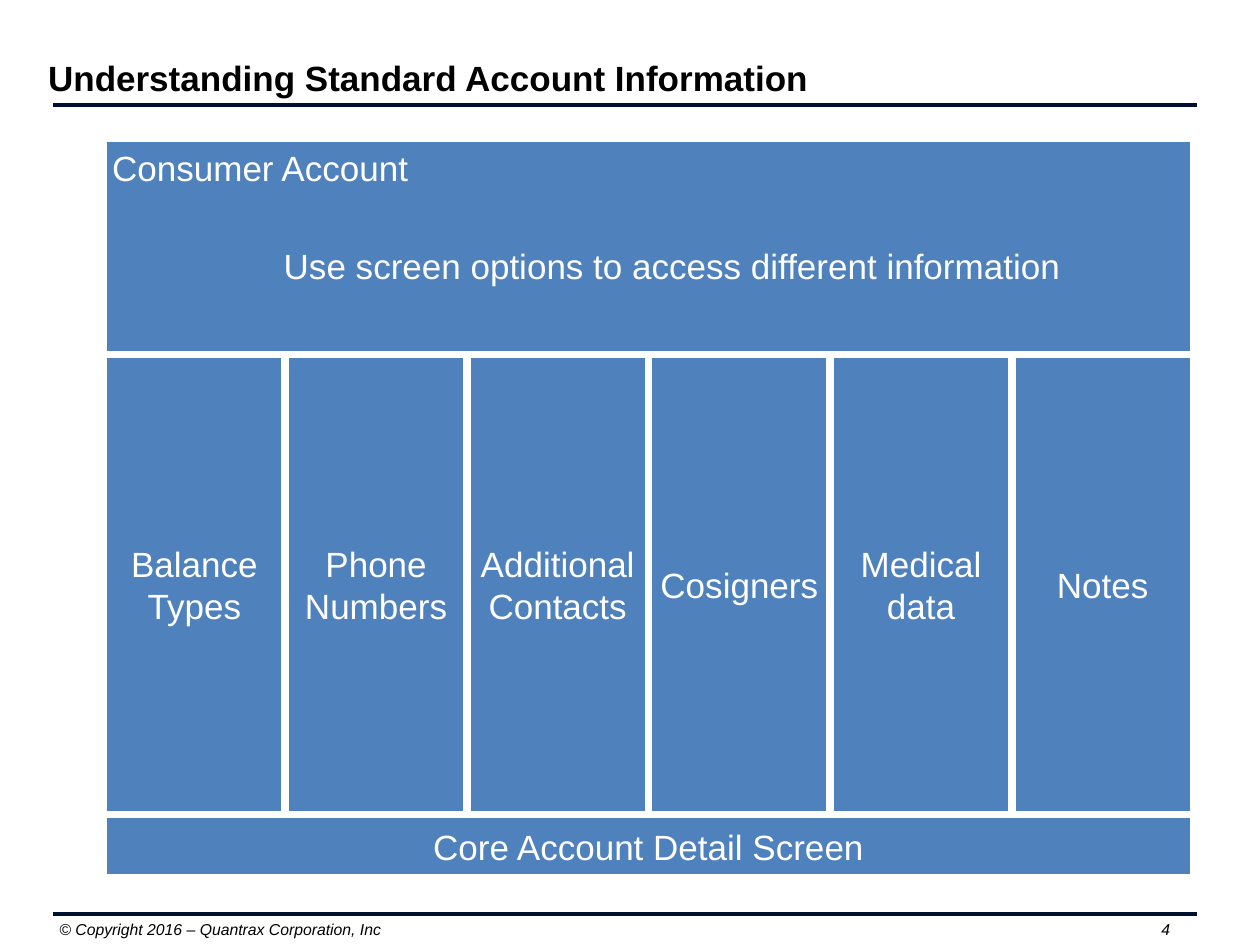
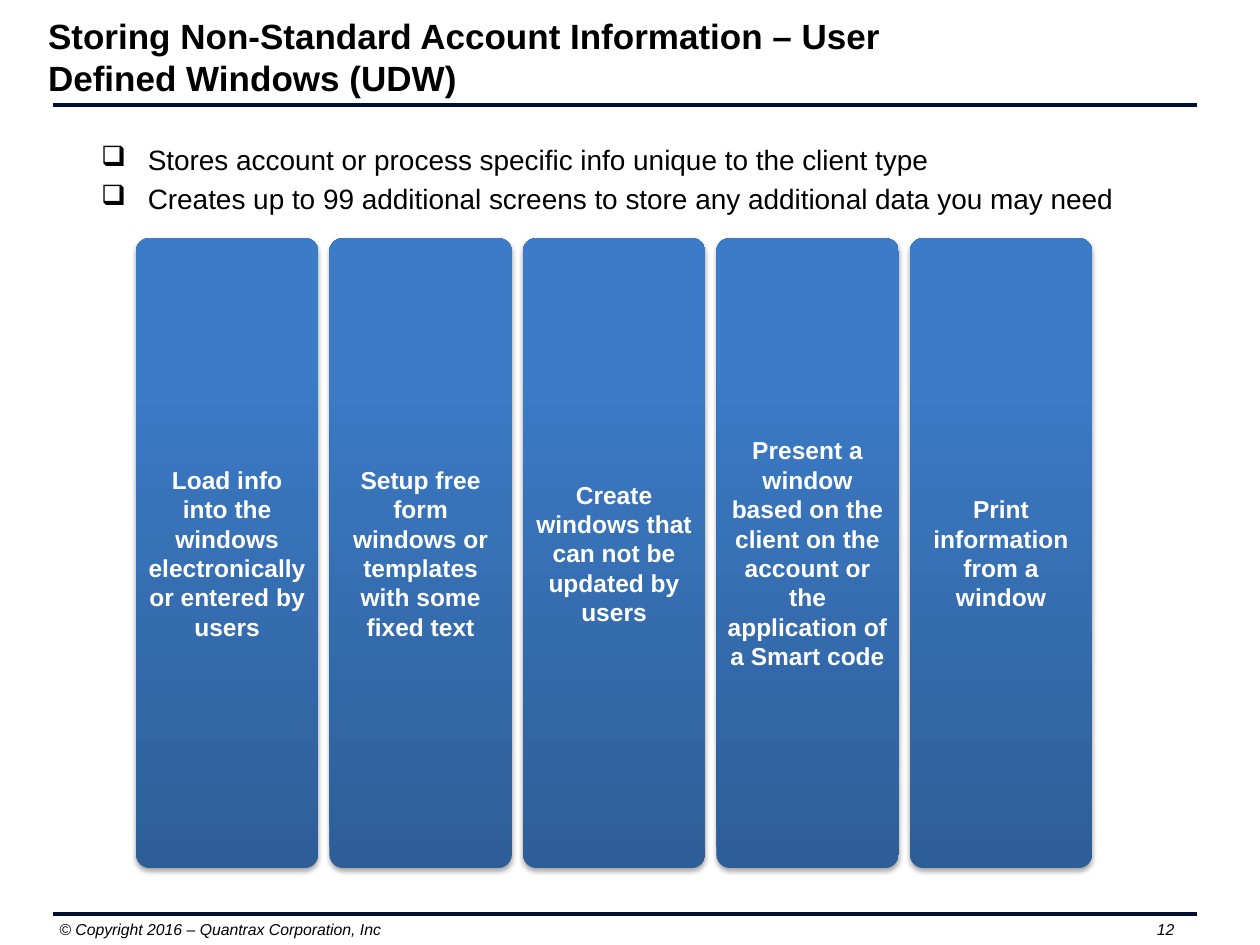
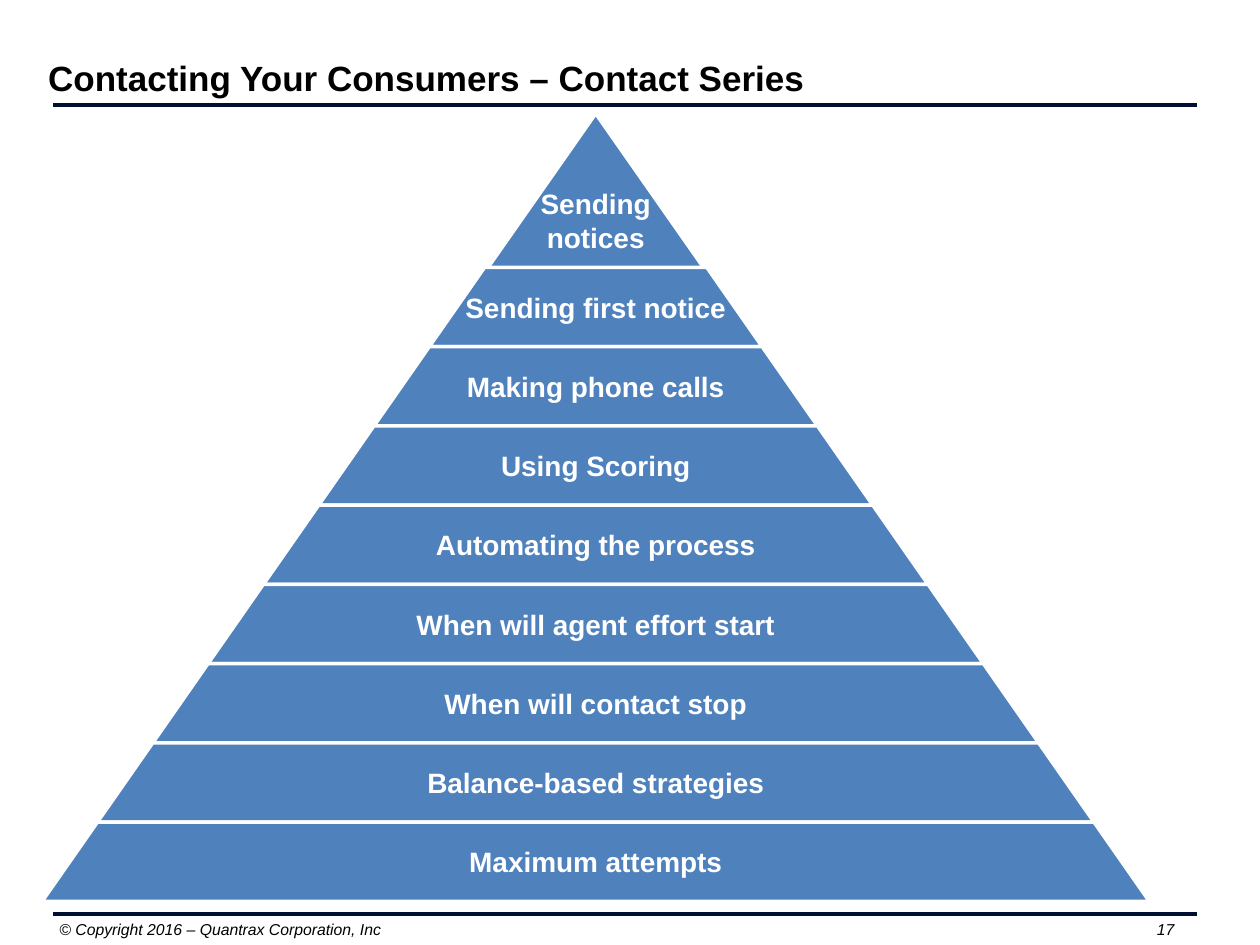
from copy import deepcopy

from pptx import Presentation
from pptx.dml.color import RGBColor
from pptx.enum.shapes import MSO_CONNECTOR, MSO_SHAPE
from pptx.enum.text import MSO_ANCHOR, PP_ALIGN
from pptx.oxml.ns import qn
from pptx.util import Cm, Pt

LEFT, CENTER = PP_ALIGN.LEFT, PP_ALIGN.CENTER
TOP, MIDDLE, BOTTOM = MSO_ANCHOR.TOP, MSO_ANCHOR.MIDDLE, MSO_ANCHOR.BOTTOM
RECTANGLE, ROUNDED = MSO_SHAPE.RECTANGLE, MSO_SHAPE.ROUNDED_RECTANGLE
STRAIGHT = MSO_CONNECTOR.STRAIGHT

COLORS = {
    "text": "000000",
    "white": "FFFFFF",
    "soft_white": "FDFDFD",
    "rule": "001030",
    "block": "4F81BD",
    "card_bottom": "2E5E97",
    "card_middle": "3C7BC7",
    "card_top": "3A7CCA",
    "shadow": "000000",
}
CARD_STOPS = [(0, "card_bottom"), (0.8, "card_middle"), (1, "card_top")]

TITLE = {"size": Pt(20), "bold": True}
FOOTER = {"size": Pt(9), "italic": True}
BLOCK_TEXT = {"size": Pt(20)}
BULLET_TEXT = {"size": Pt(16)}
CARD_TEXT = {"size": Pt(14), "bold": True}
LEVEL_TEXT = {"size": Pt(16), "bold": True}

COPYRIGHT = "© Copyright 2016 – Quantrax Corporation, Inc"
ACCOUNT_PARTS = ["Balance Types", "Phone Numbers", "Additional Contacts",
                 "Cosigners", "Medical data", "Notes"]
WINDOW_USES = [
    "Load info into the windows electronically or entered by users",
    "Setup free form windows or templates with some fixed text",
    "Create windows that can not be updated by users",
    "Present a window based on the client on the account or the "
    "application of a Smart code",
    "Print information from a window",
]
WINDOW_BULLETS = [
    "Stores account or process specific info unique to the client type",
    "Creates up to 99 additional screens to store any additional data you may need",
]
CONTACT_LEVELS = [
    "Sending first notice", "Making phone calls", "Using Scoring",
    "Automating the process", "When will agent effort start",
    "When will contact stop", "Balance-based strategies", "Maximum attempts",
]


def rgb(name):
    return RGBColor.from_string(COLORS[name])


def write_text(shape, lines, style, color="text", align=LEFT, anchor=TOP):
    frame = shape.text_frame
    frame_format = {"word_wrap": True, "vertical_anchor": anchor}
    sides = ("left", "top", "right", "bottom")
    frame_format.update({f"margin_{side}": Cm(0.13) for side in sides})
    for name, value in frame_format.items():
        setattr(frame, name, value)
    for index, line in enumerate(lines):
        para = frame.add_paragraph() if index else frame.paragraphs[0]
        para.alignment = align
        span = para.add_run()
        span.text = line
        for name, value in {"name": "Arial", **style}.items():
            setattr(span.font, name, value)
        span.font.color.rgb = rgb(color)
    return frame


def add_text(page, place, lines, style, **layout):
    box = page.shapes.add_textbox(*map(Cm, place))
    return write_text(box, lines, style, **layout)


def add_rule(page, y):
    rule = page.shapes.add_connector(STRAIGHT, Cm(1.07), Cm(y), Cm(24.13), Cm(y))
    rule.line.color.rgb = rgb("rule")
    rule.line.width = Pt(2.25)
    properties = rule.element.spPr
    properties.append(properties.makeelement(qn("a:effectLst"), {}))


def add_page(deck, title, number):
    page = deck.slides.add_slide(deck.slide_layouts[6])
    add_rule(page, 2.11)
    add_rule(page, 18.42)
    add_text(page, (1.07, 18.42, 8.26, 0.58), [COPYRIGHT], FOOTER)
    add_text(page, (23, 18.42, 1, 0.58), [str(number)], FOOTER, align=CENTER)
    add_text(page, (0.84, 0.2, 18.42, 1.92), [title], TITLE, anchor=BOTTOM)
    return page


def paint_block(shape):
    shape.shadow.inherit = False
    shape.fill.solid()
    shape.fill.fore_color.rgb = rgb("block")
    shape.line.color.rgb = rgb("white")
    shape.line.width = Pt(2)


def add_block(page, place, label, align=CENTER, anchor=MIDDLE):
    block = page.shapes.add_shape(RECTANGLE, *map(Cm, place))
    paint_block(block)
    write_text(block, [label], BLOCK_TEXT, "white", align, anchor)


def add_soft_shadow(shape):
    shape.shadow.inherit = False
    effects = shape.element.spPr.find(qn("a:effectLst"))
    parent = effects
    for tag, values in (
        ("a:outerShdw", {"blurRad": str(Pt(3)), "dist": str(Pt(1.8)),
                         "dir": "5400000", "rotWithShape": "0"}),
        ("a:srgbClr", {"val": COLORS["shadow"]}),
        ("a:alpha", {"val": "35000"}),
    ):
        child = parent.makeelement(qn(tag), values)
        parent.append(child)
        parent = child


def add_card(page, place, label):
    card = page.shapes.add_shape(ROUNDED, *map(Cm, place))
    card.adjustments[0] = 0.075
    card.line.fill.background()
    card.fill.gradient()
    card.fill.gradient_angle = 90
    stop_list = card.element.spPr.find(".//" + qn("a:gsLst"))
    stop_list.insert(1, deepcopy(stop_list[0]))
    for stop, (position, color) in zip(card.fill.gradient_stops, CARD_STOPS):
        stop.position = position
        stop.color.rgb = rgb(color)
    add_soft_shadow(card)
    write_text(card, [label], CARD_TEXT, "white", CENTER, MIDDLE)


def add_bullets(page, place, lines):
    frame = add_text(page, place, lines, BULLET_TEXT)
    for index, para in enumerate(frame.paragraphs):
        properties = para._p.get_or_add_pPr()
        properties.set("marL", str(Cm(2.21)))
        properties.set("indent", str(Cm(-0.94)))
        bullet = properties.makeelement(qn("a:buChar"), {"char": "❑"})
        properties.append(bullet)
        if index:
            para.space_before = Pt(3)


def add_level(page, center, top, bottom, half_top, half_bottom, lines, anchor=MIDDLE):
    """Draw one slice of the pyramid; a zero half_top makes its tip."""
    corners = [(center + half_top, top), (center + half_bottom, bottom),
               (center - half_bottom, bottom), (center - half_top, top)]
    points = [(Cm(x), Cm(y)) for x, y in corners]
    builder = page.shapes.build_freeform(*points[0])
    builder.add_line_segments(points[1:], close=True)
    level = builder.convert_to_shape()
    paint_block(level)
    return write_text(level, lines, LEVEL_TEXT, "white", CENTER, anchor)


def build_account_page(deck):
    page = add_page(deck, "Understanding Standard Account Information", 4)
    left, width, gap = 2.13, 21.89, 0.08
    add_block(page, (left, 2.82, width, 4.29), "Consumer Account", LEFT, TOP)
    add_text(page, (5.59, 4.8, 16.28, 1.12),
             ["Use screen options to access different information"],
             BLOCK_TEXT, color="soft_white")
    pitch = (width + gap) / len(ACCOUNT_PARTS)
    for index, part in enumerate(ACCOUNT_PARTS):
        add_block(page, (left + index * pitch, 7.19, pitch - gap, 9.19), part)
    add_block(page, (left, 16.46, width, 1.19), "Core Account Detail Screen")


def build_windows_page(deck):
    page = add_page(deck, "Storing Non-Standard Account Information – "
                          "User Defined Windows (UDW)", 12)
    add_bullets(page, (0.64, 2.75, 23.7, 1.73), WINDOW_BULLETS)
    for index, use in enumerate(WINDOW_USES):
        add_card(page, (2.74 + index * 3.9, 4.8, 3.68, 12.7), use)


def build_contact_page(deck):
    page = add_page(deck, "Contacting Your Consumers – Contact Series", 17)
    center, top, bottom = 12.01, 5.39, 18.17
    half_top, half_bottom = 2.24, 11.16
    tip = add_level(page, center, 2.29, 5.49, 0, half_top,
                    ["Sending", "notices"], BOTTOM)
    tip.margin_bottom = Cm(0.37)
    height = (bottom - top) / len(CONTACT_LEVELS)
    growth = (half_bottom - half_top) / len(CONTACT_LEVELS)
    for index, label in enumerate(CONTACT_LEVELS):
        y, half = top + index * height, half_top + index * growth
        add_level(page, center, y, y + height, half, half + growth, [label])


def main():
    deck = Presentation()
    deck.slide_width, deck.slide_height = Cm(25.4), Cm(19.05)
    build_account_page(deck)
    build_windows_page(deck)
    build_contact_page(deck)
    deck.save("out.pptx")


if __name__ == "__main__":
    main()
